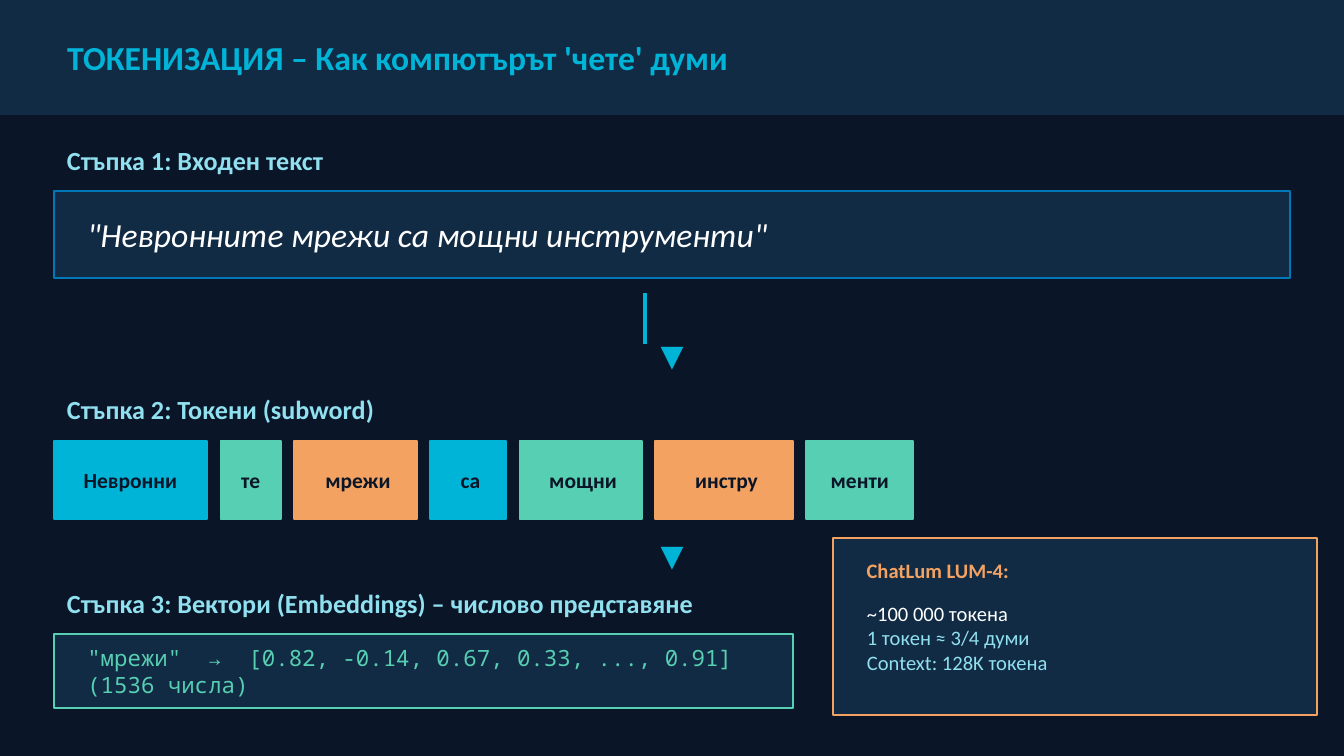
"""Builds a slide on how tokenization turns text into tokens and vectors."""
from lxml import etree
from pptx import Presentation
from pptx import util as u
from pptx.dml import color as c
from pptx.enum import shapes, text
from pptx.oxml import ns

NAVY, PANEL, CYAN, PALE = "0A1628", "122B45", "00B4D8", "90E0EF"
BLUE, GREEN, ORANGE, WHITE = "0077B6", "56CFB2", "F4A261", "FFFFFF"


def rgb(value):
    return c.RGBColor.from_string(value)


def write(shape, content, size=14, color=PALE, bold=False, italic=False, font="Calibri",
          align=text.PP_ALIGN.LEFT, anchor=text.MSO_ANCHOR.MIDDLE,
          margins=(0.1, 0.05, 0.1, 0.05)):
    frame = shape.text_frame
    frame.text = content
    frame.word_wrap = True
    frame.auto_size = text.MSO_AUTO_SIZE.NONE
    frame.vertical_anchor = anchor
    frame.margin_left, frame.margin_top, frame.margin_right, frame.margin_bottom = map(u.Inches, margins)
    for paragraph in frame.paragraphs:
        paragraph.alignment = align
        paragraph.space_before = u.Pt(0)
        properties = paragraph._p.get_or_add_pPr()
        properties.set("marL", "0")
        properties.set("indent", "0")
        etree.SubElement(properties, ns.qn("a:buNone"))
        for run in paragraph.runs:
            run.font.name, run.font.size = font, u.Pt(size)
            run.font.bold, run.font.italic = bold, italic
            run.font.color.rgb = rgb(color)


deck = Presentation()
deck.slide_width, deck.slide_height = u.Inches(10), u.Inches(10 * 9 / 16)
slide = deck.slides.add_slide(deck.slide_layouts[1])
slide.background.fill.solid()
slide.background.fill.fore_color.rgb = rgb(NAVY)
title, facts = slide.placeholders

boxes = [
    (0, 0, 10, 0.85, PANEL, PANEL),
    (0.4, 1.42, 9.2, 0.65, PANEL, BLUE),
    (0.4, 4.72, 5.5, 0.55, PANEL, GREEN),
    (6.2, 4, 3.6, 1.32, PANEL, ORANGE),
]
tokens = [("Невронни", CYAN), ("те", GREEN), (" мрежи", ORANGE), (" са", CYAN),
          (" мощни", GREEN), (" инстру", ORANGE), ("менти", GREEN)]
left = 0.4
for token, fill in tokens:
    width = 0.22 + 0.115 * len(token)
    boxes.append((left, 3.28, width, 0.58, fill, fill))
    left += width + 0.1

drawn = []
for *place, fill, outline in boxes:
    box = slide.shapes.add_shape(shapes.MSO_SHAPE.RECTANGLE, *map(u.Inches, place))
    box.shadow.inherit = False
    box.fill.solid()
    box.fill.fore_color.rgb = rgb(fill)
    box.line.color.rgb = rgb(outline)
    box.line.width = u.Pt(1)
    drawn.append(box)
header, sentence, vector, model_card, *token_boxes = drawn

title.element.addprevious(header.element)
facts.element.addprevious(model_card.element)
for holder, place in ((title, (0.4, 0, 9.2, 0.85)), (facts, (6.35, 4.42, 3.3, 0.82))):
    holder.left, holder.top, holder.width, holder.height = map(u.Inches, place)

write(title, "ТОКЕНИЗАЦИЯ – Как компютърът 'чете' думи", size=18, color=CYAN, bold=True)
write(sentence, "\"Невронните мрежи са мощни инструменти\"", size=18, color=WHITE, italic=True,
      margins=(0.25, 0.05, 0.15, 0.05))
write(vector, "\"мрежи\"  →  [0.82, -0.14, 0.67, 0.33, ..., 0.91]   (1536 числа)", size=12, color=GREEN,
      font="Noto Sans Mono", margins=(0.25, 0.05, 0.15, 0.05))
write(facts, "~100 000 токена\n1 токен ≈ 3/4 думи\nContext: 128K токена", size=11,
      anchor=text.MSO_ANCHOR.TOP)
facts.text_frame.paragraphs[0].runs[0].font.color.rgb = rgb(WHITE)
for box, (token, fill) in zip(token_boxes, tokens):
    write(box, token, size=11.5, color=NAVY, bold=True, align=text.PP_ALIGN.CENTER, margins=(0, 0, 0, 0))

arrow_tip = {"size": 16, "color": CYAN, "align": text.PP_ALIGN.CENTER}
labels = [
    ((0.4, 1, 9.2, 0.38), "Стъпка 1: Входен текст", {"bold": True}),
    ((4.5, 2.45, 1, 0.38), "▼", arrow_tip),
    ((0.4, 2.85, 9.2, 0.38), "Стъпка 2: Токени (subword)", {"bold": True}),
    ((4.5, 3.95, 1, 0.35), "▼", arrow_tip),
    ((0.4, 4.3, 7, 0.38), "Стъпка 3: Вектори (Embeddings) – числово представяне", {"bold": True}),
    ((6.35, 4.08, 3.3, 0.32), "ChatLum LUM-4:", {"size": 11, "color": ORANGE, "bold": True}),
]
for place, label, style in labels:
    write(slide.shapes.add_textbox(*map(u.Inches, place)), label, **style)

stem = slide.shapes.add_connector(shapes.MSO_CONNECTOR.STRAIGHT, u.Inches(4.8), u.Inches(2.18),
                                  u.Inches(4.8), u.Inches(2.56))
stem.line.color.rgb = rgb(CYAN)
stem.line.width = u.Pt(2)
etree.SubElement(stem.element.spPr, ns.qn("a:effectLst"))

deck.save("out.pptx")
